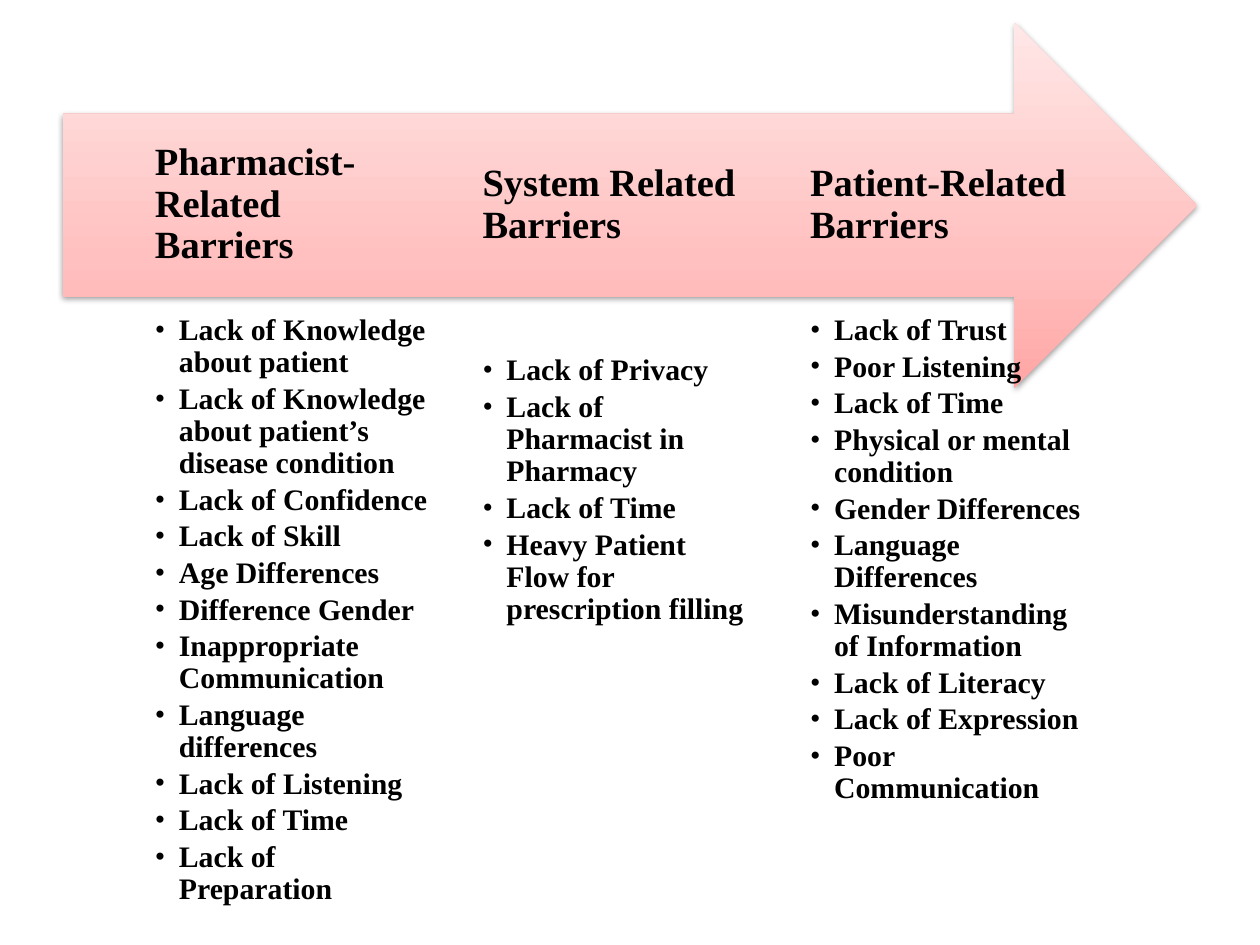
from copy import deepcopy

from pptx import Presentation
from pptx.dml.color import RGBColor
from pptx.enum.shapes import MSO_SHAPE as SHAPE
from pptx.enum.text import MSO_ANCHOR as ANCHOR, PP_ALIGN as ALIGN
from pptx.oxml import parse_xml
from pptx.oxml.ns import nsdecls, qn
from pptx.util import Inches, Pt

# Content: heading, inset above the list, barriers
COLUMNS = [
    ("Pharmacist-Related Barriers", 0, [
        "Lack of Knowledge about patient",
        "Lack of Knowledge about patient’s disease condition",
        "Lack of Confidence",
        "Lack of Skill",
        "Age Differences",
        "Difference Gender",
        "Inappropriate Communication",
        "Language differences",
        "Lack of Listening",
        "Lack of Time",
        "Lack of Preparation",
    ]),
    ("System Related Barriers", 0.32, [
        "Lack of Privacy",
        "Lack of Pharmacist in Pharmacy",
        "Lack of Time",
        "Heavy Patient Flow for prescription filling",
    ]),
    ("Patient-Related Barriers", 0, [
        "Lack of Trust",
        "Poor Listening",
        "Lack of Time",
        "Physical or mental condition",
        "Gender Differences",
        "Language Differences",
        "Misunderstanding of Information",
        "Lack of Literacy",
        "Lack of Expression",
        "Poor Communication",
    ]),
]
GRADIENT = [(0, "FFA6A5"), (0.35, "FFC0BF"), (1, "FFE7E7")]
FONT = "Times New Roman"
FIRST_LEFT, COLUMN_STEP, COLUMN_WIDTH = 1.23, 2.6, 2.17
HEAD_TOP, HEAD_HEIGHT = 0.9, 1.45
LIST_TOP, LIST_HEIGHT = 2.5, 4.66
INDENT = Inches(0.19)


def color(value):
    return RGBColor.from_string(value)


def add_bullet(paragraph):
    properties = paragraph._p.get_or_add_pPr()
    properties.set("lvl", "1")
    properties.set("marL", str(INDENT))
    properties.set("indent", str(-INDENT))
    properties.append(parse_xml(
        f'<a:buFont {nsdecls("a")} typeface="{FONT}"/>'))
    properties.append(parse_xml(f'<a:buChar {nsdecls("a")} char="•"/>'))


def add_outline(page, left, top, width, height):
    right, bottom = Inches(left + width), Inches(top + height)
    left, top = Inches(left), Inches(top)
    builder = page.shapes.build_freeform(left, top)
    builder.add_line_segments([(right, top), (right, bottom), (left, bottom)])
    box = builder.convert_to_shape()
    box.fill.background()
    box.line.fill.background()
    box.shadow.inherit = False
    return box


def add_text(page, lines, left, top, height, size, inset_top=0, inset_bottom=0,
             anchor=ANCHOR.TOP, bullets=False, space_after=0):
    frame = add_outline(page, left, top, COLUMN_WIDTH, height).text_frame
    frame.word_wrap = True
    frame.vertical_anchor = anchor
    frame.margin_left = frame.margin_right = 0
    frame.margin_top, frame.margin_bottom = Inches(inset_top), Inches(inset_bottom)
    for index, line in enumerate(lines):
        paragraph = frame.add_paragraph() if index else frame.paragraphs[0]
        if bullets:
            add_bullet(paragraph)
        paragraph.alignment = ALIGN.LEFT
        paragraph.line_spacing = 0.9
        paragraph.space_after = Pt(space_after)
        span = paragraph.add_run()
        span.text = line
        span.font.name, span.font.size, span.font.bold = FONT, Pt(size), True
        span.font.color.rgb = color("000000")


def add_arrow(page):
    arrow = page.shapes.add_shape(
        SHAPE.RIGHT_ARROW, Inches(0.5), Inches(0.18), Inches(9), Inches(2.9))
    arrow.line.fill.background()
    arrow.fill.gradient()
    arrow.fill.gradient_angle = 90
    properties = arrow._element.spPr
    stops = properties.find(".//" + qn("a:gsLst"))
    stops.append(deepcopy(stops[0]))
    for stop, (position, value) in zip(arrow.fill.gradient_stops, GRADIENT):
        stop.position = position
        stop.color.rgb = color(value)
    # Soft shadow below the arrow
    arrow.shadow.inherit = False
    properties.find(qn("a:effectLst")).append(parse_xml(
        f'<a:outerShdw {nsdecls("a")} blurRad="{Pt(3.1)}" dist="{Pt(1.6)}" '
        'dir="5400000" rotWithShape="0"><a:srgbClr val="000000">'
        '<a:alpha val="38000"/></a:srgbClr></a:outerShdw>'))


def main():
    deck = Presentation()
    deck.slide_width, deck.slide_height = Inches(10), Inches(7.5)
    page = deck.slides.add_slide(deck.slide_layouts[6])
    add_arrow(page)

    # Lists below the arrow and headings on it, rightmost column at the back
    for index, (heading, list_inset, barriers) in reversed(list(enumerate(COLUMNS))):
        left = FIRST_LEFT + index * COLUMN_STEP
        add_text(page, barriers, left, LIST_TOP, LIST_HEIGHT, 17,
                 inset_top=list_inset, bullets=True, space_after=2.55)
        add_text(page, [heading], left, HEAD_TOP, HEAD_HEIGHT, 22,
                 inset_top=0.24, inset_bottom=0.24, anchor=ANCHOR.MIDDLE)
    deck.save("out.pptx")


if __name__ == "__main__":
    main()
